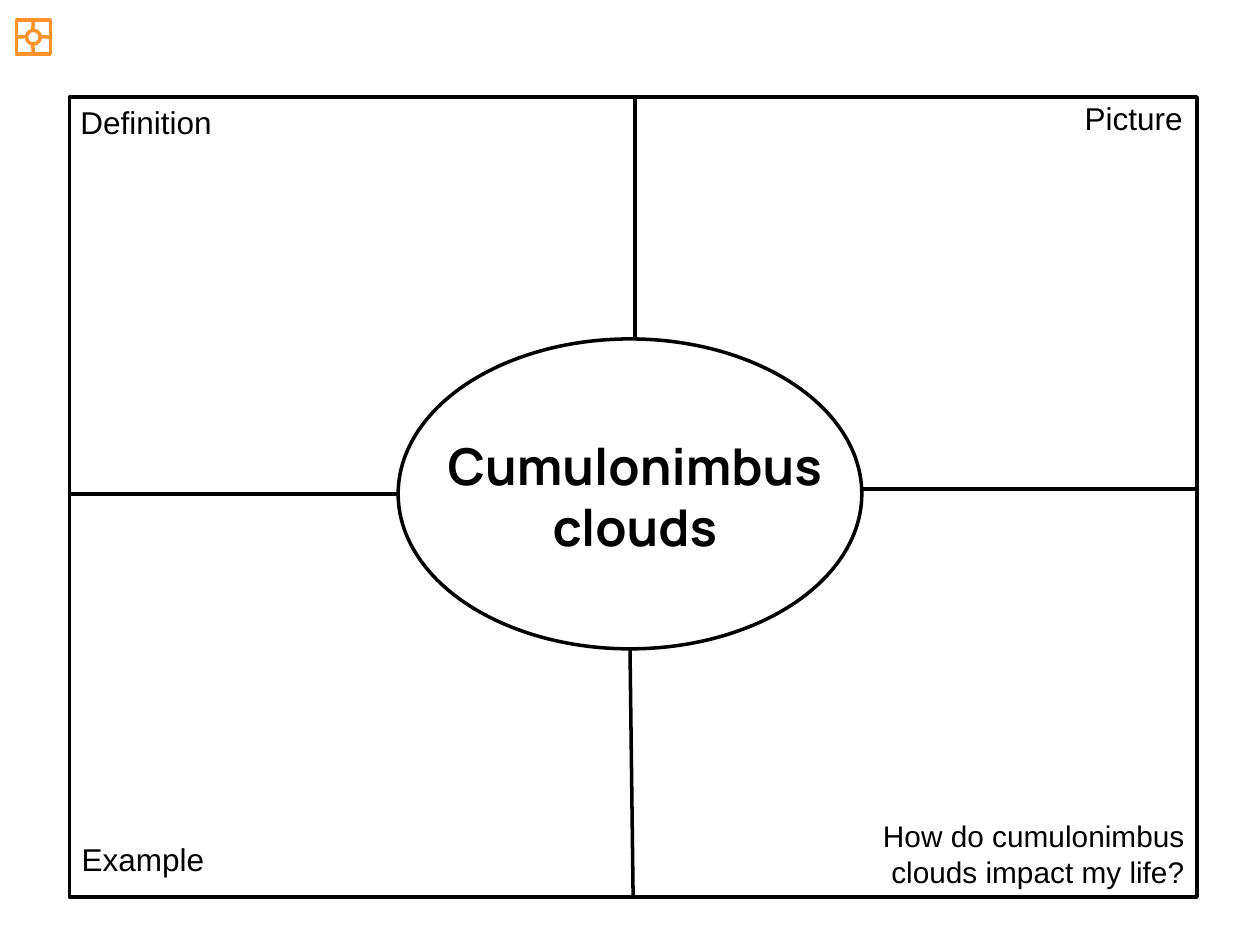
from lxml import etree
from pptx import Presentation
from pptx.dml.color import RGBColor
from pptx.enum import shapes, text
from pptx.oxml.ns import qn
from pptx.util import Inches, Pt

BLACK = RGBColor(0x00, 0x00, 0x00)
WHITE = RGBColor(0xFF, 0xFF, 0xFF)
ORANGE = RGBColor(0xFF, 0x93, 0x2B)
TOP, LEFT, BOTTOM, RIGHT = range(4)


def outline(kind, box, colour, fill=None):
    """Add an outlined shape, unfilled unless a fill is given."""
    shape = slide.shapes.add_shape(kind, *map(Inches, box))
    shape.shadow.inherit = False
    if fill is None:
        shape.fill.background()
    else:
        shape.fill.solid()
        shape.fill.fore_color.rgb = fill
    shape.line.color.rgb = colour
    shape.line.width = Pt(2)
    return shape


def write(lines, box, holder=None, size=18, font="Arial", bold=False,
          align=text.PP_ALIGN.LEFT):
    """Fill holder, or a new text box, with one paragraph per line."""
    holder = holder or slide.shapes.add_textbox(0, 0, 0, 0)
    holder.left, holder.top, holder.width, holder.height = map(Inches, box)
    frame = holder.text_frame
    frame.text = lines
    frame.word_wrap = True
    frame.auto_size = text.MSO_AUTO_SIZE.SHAPE_TO_FIT_TEXT
    frame.vertical_anchor = text.MSO_ANCHOR.TOP
    for paragraph in frame.paragraphs:
        paragraph.alignment = align
        paragraph.font.size = Pt(size)
        paragraph.font.name = font
        paragraph.font.bold = bold
        paragraph.font.color.rgb = BLACK


prs = Presentation()
prs.slide_width, prs.slide_height = Inches(10), Inches(7.5)
slide = prs.slides.add_slide(prs.slide_layouts[5])

# Each diagram: colour, frame, oval, and spokes from the frame to the oval.
# A spoke that starts mid-side names the frame side it is joined to.
diagrams = [
    (ORANGE, (0.13, 0.16, 0.27, 0.27), (0.21, 0.24, 0.11, 0.11), [
        (TOP, (0.26, 0.16), (0.26, 0.24)),
        (BOTTOM, (0.26, 0.43), (0.26, 0.35)),
        (LEFT, (0.13, 0.29), (0.21, 0.29)),
        (RIGHT, (0.4, 0.29), (0.32, 0.29)),
    ]),
    (BLACK, (0.55, 0.77, 8.95, 6.35), (3.16, 2.69, 3.68, 2.46), [
        (None, (5.04, 0.77), (5.04, 2.69)),
        (BOTTOM, (5.02, 7.11), (5, 5.15)),
        (None, (0.55, 3.92), (3.16, 3.92)),
        (None, (9.5, 3.88), (6.84, 3.88)),
    ]),
]
for colour, frame_box, oval_box, spokes in diagrams:
    border = outline(shapes.MSO_SHAPE.RECTANGLE, frame_box, colour)
    for side, start, end in spokes:
        spoke = slide.shapes.add_connector(
            shapes.MSO_CONNECTOR.STRAIGHT, *map(Inches, start + end))
        if side is not None:
            spoke.begin_connect(border, side)
        spoke.line.color.rgb = colour
        spoke.line.width = Pt(2)
        etree.SubElement(spoke.element.spPr, qn("a:effectLst"))
    oval = outline(shapes.MSO_SHAPE.OVAL, oval_box, colour, fill=WHITE)

# The title sits in front of the central oval.
title = slide.shapes.title
oval.element.addnext(title.element)
write("Cumulonimbus\nclouds", (3.31, 3.4, 3.46, 1.08), holder=title, size=29,
      font="Manrope", bold=True, align=text.PP_ALIGN.CENTER)

write("Definition", (0.54, 0.77, 1.25, 0.4))
write("Example", (0.55, 6.62, 1.18, 0.4))
write("Picture", (8.51, 0.74, 0.99, 0.4))
write("How do cumulonimbus\nclouds impact my life?", (4.57, 6.44, 4.93, 0.67),
      size=17, align=text.PP_ALIGN.RIGHT)

prs.save("out.pptx")
